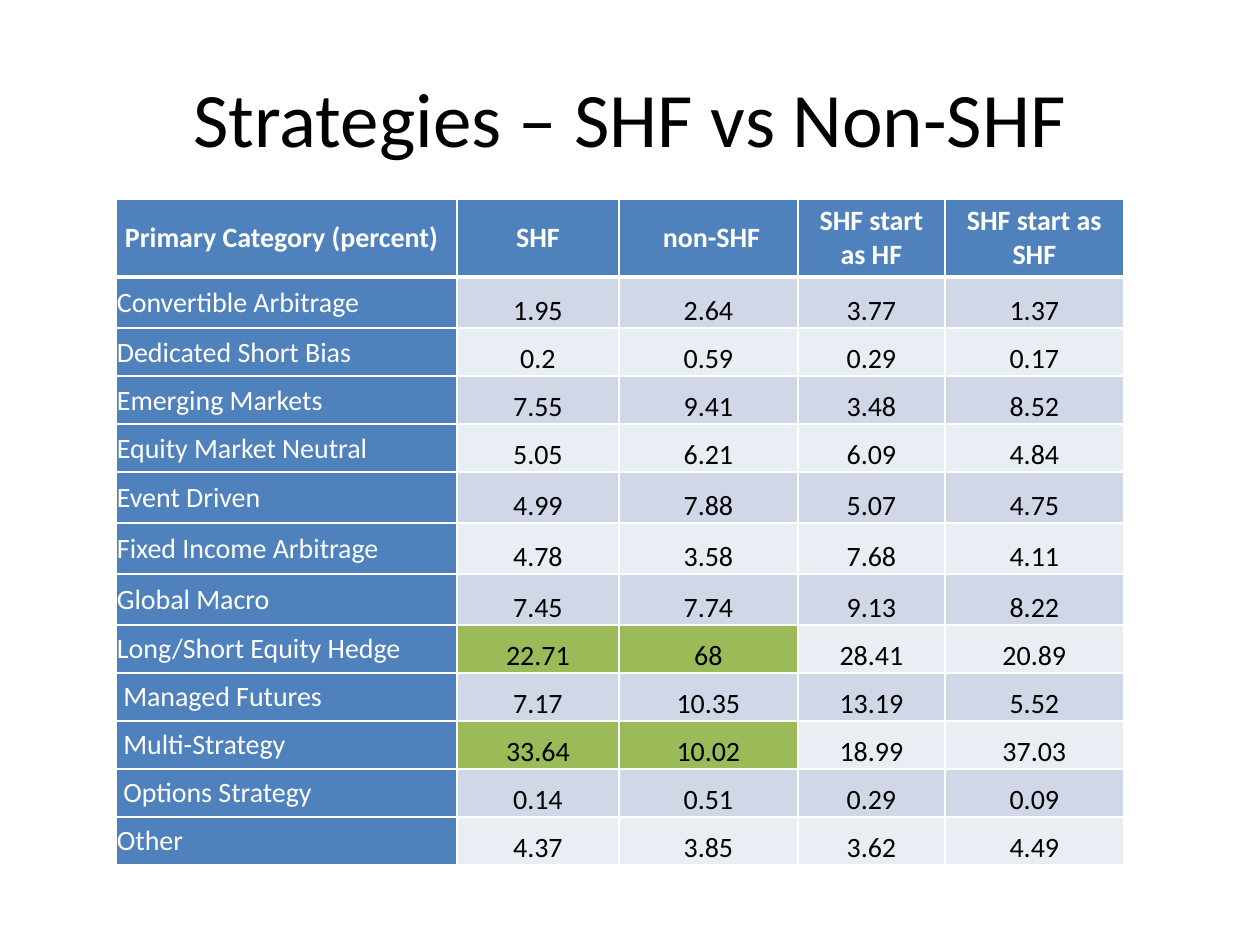
from lxml import etree
from pptx import Presentation
from pptx.dml.color import RGBColor
from pptx.enum.text import MSO_ANCHOR, PP_ALIGN
from pptx.oxml.ns import qn
from pptx.util import Pt

LEFT, CENTER = PP_ALIGN.LEFT, PP_ALIGN.CENTER
MIDDLE, BOTTOM = MSO_ANCHOR.MIDDLE, MSO_ANCHOR.BOTTOM
PX = 914400 // 126
TITLE_ONLY = 5

WHITE, BLACK = "FFFFFF", "000000"
BLUE, GREEN = "4F81BD", "9BBB59"
BANDS = ["D0D8E8", "E9EDF4"]

HEADINGS = ["Primary Category (percent)", "SHF", " non-SHF",
            "SHF start as HF", "SHF start as SHF"]
STRATEGIES = [
    ("Convertible Arbitrage", "1.95", "2.64", "3.77", "1.37"),
    ("Dedicated Short Bias", "0.2", "0.59", "0.29", "0.17"),
    ("Emerging Markets", "7.55", "9.41", "3.48", "8.52"),
    ("Equity Market Neutral", "5.05", "6.21", "6.09", "4.84"),
    ("Event Driven", "4.99", "7.88", "5.07", "4.75"),
    ("Fixed Income Arbitrage", "4.78", "3.58", "7.68", "4.11"),
    ("Global Macro", "7.45", "7.74", "9.13", "8.22"),
    ("Long/Short Equity Hedge", "22.71", "68", "28.41", "20.89"),
    (" Managed Futures", "7.17", "10.35", "13.19", "5.52"),
    (" Multi-Strategy", "33.64", "10.02", "18.99", "37.03"),
    (" Options Strategy", "0.14", "0.51", "0.29", "0.09"),
    ("Other", "4.37", "3.85", "3.62", "4.49"),
]
HIGHLIGHTED = {"Long/Short Equity Hedge", " Multi-Strategy"}
TALL = {"Convertible Arbitrage", "Event Driven", "Fixed Income Arbitrage", "Global Macro"}

COLUMN_WIDTHS = [341, 162, 179, 147, 179]
ROW_HEIGHTS = [78] + [51 if row[0] in TALL else 48 for row in STRATEGIES]


def write(frame, text, size=16, color=BLACK, bold=False, align=CENTER):
    paragraph = frame.paragraphs[0]
    paragraph.alignment = align
    run = paragraph.add_run()
    run.text = text
    run.font.name = "Calibri"
    run.font.size = Pt(size)
    run.font.bold = bold
    run.font.color.rgb = RGBColor.from_string(color)


def add_border(cell, side, points):
    """Draw one white edge; call before the cell gets its fill."""
    edge = etree.SubElement(cell._tc.get_or_add_tcPr(), qn(f"a:{side}"), w=str(Pt(points)))
    solid = etree.SubElement(edge, qn("a:solidFill"))
    etree.SubElement(solid, qn("a:srgbClr"), val=WHITE)


prs = Presentation()
prs.slide_width, prs.slide_height = 1260 * PX, 945 * PX
slide = prs.slides.add_slide(prs.slide_layouts[TITLE_ONLY])

title = slide.shapes.title
title.left, title.top, title.width, title.height = 63 * PX, 38 * PX, 1134 * PX, 158 * PX
title.text_frame.vertical_anchor = MIDDLE
write(title.text_frame, "Strategies – SHF vs Non-SHF", size=44)

strategies = slide.shapes.add_table(
    len(ROW_HEIGHTS), len(COLUMN_WIDTHS), 116 * PX, 199 * PX,
    sum(COLUMN_WIDTHS) * PX, sum(ROW_HEIGHTS) * PX).table
for column, width in zip(strategies.columns, COLUMN_WIDTHS):
    column.width = width * PX
for row, height in zip(strategies.rows, ROW_HEIGHTS):
    row.height = height * PX

for r, entries in enumerate([HEADINGS, *STRATEGIES]):
    for c, entry in enumerate(entries):
        is_heading, is_label = r == 0, r > 0 and c == 0
        is_value = not (is_heading or is_label)
        if not is_value:
            fill = BLUE
        elif entries[0] in HIGHLIGHTED and c <= 2:
            fill = GREEN
        else:
            fill = BANDS[(r - 1) % 2]

        cell = strategies.cell(r, c)
        for side in ("lnL", "lnR", "lnT", "lnB"):
            heading_rule = (r, side) in {(0, "lnB"), (1, "lnT")}
            add_border(cell, side, 3 if heading_rule else 1)
        cell.fill.solid()
        cell.fill.fore_color.rgb = RGBColor.from_string(fill)
        cell.margin_left = cell.margin_right = (1 if is_label else 9) * PX
        cell.margin_top = (1 if is_label else 0) * PX
        cell.margin_bottom = 0
        cell.vertical_anchor = BOTTOM if is_value else MIDDLE
        write(cell.text_frame, entry, color=BLACK if is_value else WHITE,
              bold=is_heading, align=LEFT if c == 0 else CENTER)

prs.save("out.pptx")
